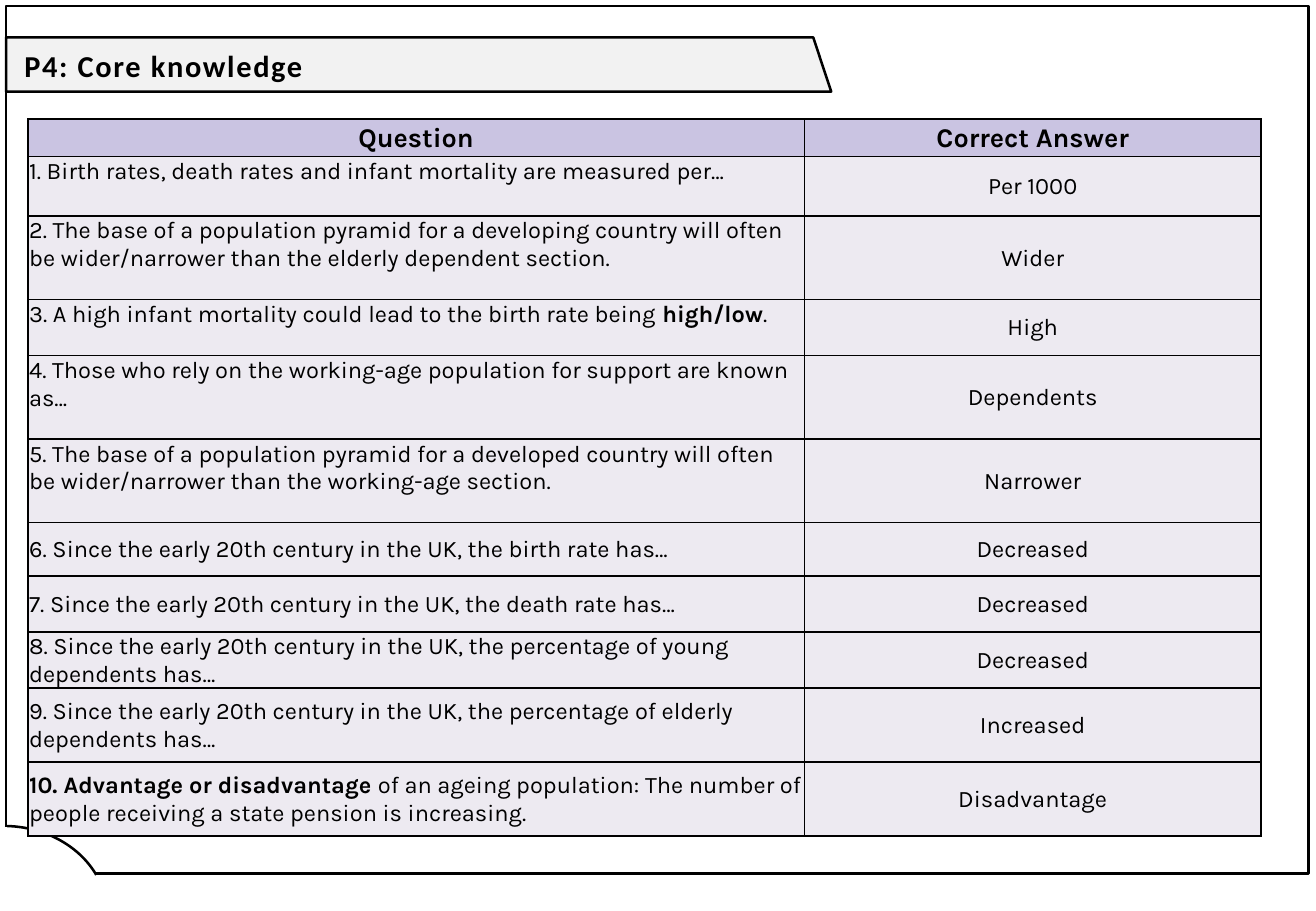
"""Build the P4 core knowledge slide: banner title, page frame and question table."""
from dataclasses import dataclass

from lxml import etree
from pptx import Presentation
from pptx.dml.color import RGBColor
from pptx.enum.shapes import MSO_SHAPE
from pptx.enum.text import MSO_ANCHOR, MSO_AUTO_SIZE, PP_ALIGN
from pptx.oxml.ns import qn
from pptx.util import Inches, Pt

RECT, ARC = MSO_SHAPE.RECTANGLE, MSO_SHAPE.ARC
TOP, MIDDLE = MSO_ANCHOR.TOP, MSO_ANCHOR.MIDDLE
LEFT, CENTER = PP_ALIGN.LEFT, PP_ALIGN.CENTER
NO_FIT = MSO_AUTO_SIZE.NONE


@dataclass(frozen=True)
class Theme:
    ink: RGBColor = RGBColor.from_string("000000")
    paper: RGBColor = RGBColor.from_string("FFFFFF")
    banner: RGBColor = RGBColor.from_string("F2F2F2")
    head: RGBColor = RGBColor.from_string("CAC4E2")
    body: RGBColor = RGBColor.from_string("EDEAF1")
    title_font: str = "Calibri"
    table_font: str = "Karla"
    title_size: Pt = Pt(18)
    head_size: Pt = Pt(16)
    body_size: Pt = Pt(14)
    outline: Pt = Pt(1.5)
    border: Pt = Pt(1)


theme = Theme()
W, H = Inches(10.83), Inches(7.5)


def share(left, top, width, height):
    """Turn percentages of the slide's width and height into lengths."""
    return [int(size * pct / 100) for size, pct in zip((W, H, W, H), (left, top, width, height))]


def style(sp, fill, outlined=True):
    """Give a shape its fill and outline, without a shadow."""
    sp.shadow.inherit = False
    if fill is None:
        sp.fill.background()
    else:
        sp.fill.solid()
        sp.fill.fore_color.rgb = fill
    if outlined:
        sp.line.color.rgb = theme.ink
        sp.line.width = theme.outline
    else:
        sp.line.fill.background()


ROWS = [
    (4.13, MIDDLE, [("Question", True)], "Correct Answer"),
    (6.5, TOP, [("1. Birth rates, death rates and infant mortality are measured per…", False)], "Per 1000"),
    (9.16, TOP, [("2. The base of a population pyramid for a developing country will often "
                  "be wider/narrower than the elderly dependent section.", False)], "Wider"),
    (6.2, TOP, [("3. A high infant mortality could lead to the birth rate being ", False),
                ("high/low", True), (".", False)], "High"),
    (9.16, TOP, [("4. Those who rely on the working-age population for support are known as…", False)],
     "Dependents"),
    (9.16, TOP, [("5. The base of a population pyramid for a developed country will often "
                  "be wider/narrower than the working-age section.", False)], "Narrower"),
    (5.87, MIDDLE, [("6. Since the early 20th century in the UK, the birth rate has…", False)], "Decreased"),
    (6.13, MIDDLE, [("7. Since the early 20th century in the UK, the death rate has…", False)], "Decreased"),
    (6.13, MIDDLE, [("8. Since the early 20th century in the UK, the percentage of young "
                     "dependents has…", False)], "Decreased"),
    (8.13, MIDDLE, [("9. Since the early 20th century in the UK, the percentage of elderly "
                     "dependents has…", False)], "Increased"),
    (8.13, MIDDLE, [("10. Advantage or disadvantage ", True),
                    ("of an ageing population: The number of people receiving a state pension "
                     "is increasing.", False)], "Disadvantage"),
]
COLUMNS = (59, 34.72)

prs = Presentation()
prs.slide_width, prs.slide_height = W, H
s = prs.slides.add_slide(prs.slide_layouts[5])

corners = [share(x, y, 0, 0)[:2] for x, y in ((0.46, 4.1), (61.8, 4.1), (63.16, 10.05), (0.46, 10.05))]
builder = s.shapes.build_freeform(*corners[0])
builder.add_line_segments(corners[1:], close=True)
style(builder.convert_to_shape(), theme.banner)

frame = s.shapes.add_shape(RECT, *share(0.46, 0.67, 98.98, 95.2))
style(frame, None)
corner = s.shapes.add_shape(ARC, *share(-7.57, 90.67, 15.7, 19.33))
corner.adjustments[0], corner.adjustments[1] = 162.53, 202.27
style(corner, theme.paper)
gap = s.shapes.add_shape(RECT, *share(0.09, 90.8, 0.46, 1.33))
style(gap, theme.paper, outlined=False)

title = s.shapes.title
title.left, title.top, title.width, title.height = share(0.92, 2.8, 59.37, 8.4)
title.element.getparent().append(title.element)
tf = title.text_frame
tf.text = "P4: Core knowledge"
tf.word_wrap = True
tf.auto_size = NO_FIT
tf.vertical_anchor = MIDDLE
p = tf.paragraphs[0]
p.alignment = LEFT
p.line_spacing = 1.07
p.space_after = Pt(8)
p.font.name, p.font.size, p.font.bold = theme.title_font, theme.title_size, True
p.font.color.rgb = theme.ink
for props in title.element.iter(qn("a:defRPr")):
    props.set("spc", "100")

area = share(2.12, 13.07, sum(COLUMNS), sum(row[0] for row in ROWS))
table = s.shapes.add_table(len(ROWS), len(COLUMNS), *area).table
table.first_row = table.horz_banding = False
for column, width in zip(table.columns, COLUMNS):
    column.width = int(W * width / 100)

for i, (height, anchor, question, answer) in enumerate(ROWS):
    table.rows[i].height = int(H * height / 100)
    is_head = i == 0
    contents = ((question, anchor, CENTER if is_head else LEFT), ([(answer, is_head)], MIDDLE, CENTER))
    for j, (runs, cell_anchor, align) in enumerate(contents):
        cell = table.cell(i, j)
        cell.margin_left = cell.margin_right = cell.margin_top = Inches(0.01)
        cell.margin_bottom = 0
        cell.vertical_anchor = cell_anchor
        tcPr = cell.fill and next(cell.text_frame.paragraphs[0].font and table.cell(i, j) and
                                  table.rows[i].cells[j] for _ in range(1)) and None
        p = cell.text_frame.paragraphs[0]
        p.alignment = align
        p.font.name = theme.table_font
        p.font.size = theme.head_size if is_head else theme.body_size
        p.font.color.rgb = theme.ink
        for text, bold in runs:
            r = p.add_run()
            r.text = text
            r.font.bold = bold
        cell.fill.solid()
        cell.fill.fore_color.rgb = theme.head if is_head else theme.body

for tcPr in s.element.iter(qn("a:tcPr")):
    for n, side in enumerate(("a:lnL", "a:lnR", "a:lnT", "a:lnB")):
        line = etree.Element(qn(side), w=str(theme.border))
        fill = etree.SubElement(line, qn("a:solidFill"))
        etree.SubElement(fill, qn("a:srgbClr"), val=str(theme.ink))
        tcPr.insert(n, line)

prs.save("out.pptx")
